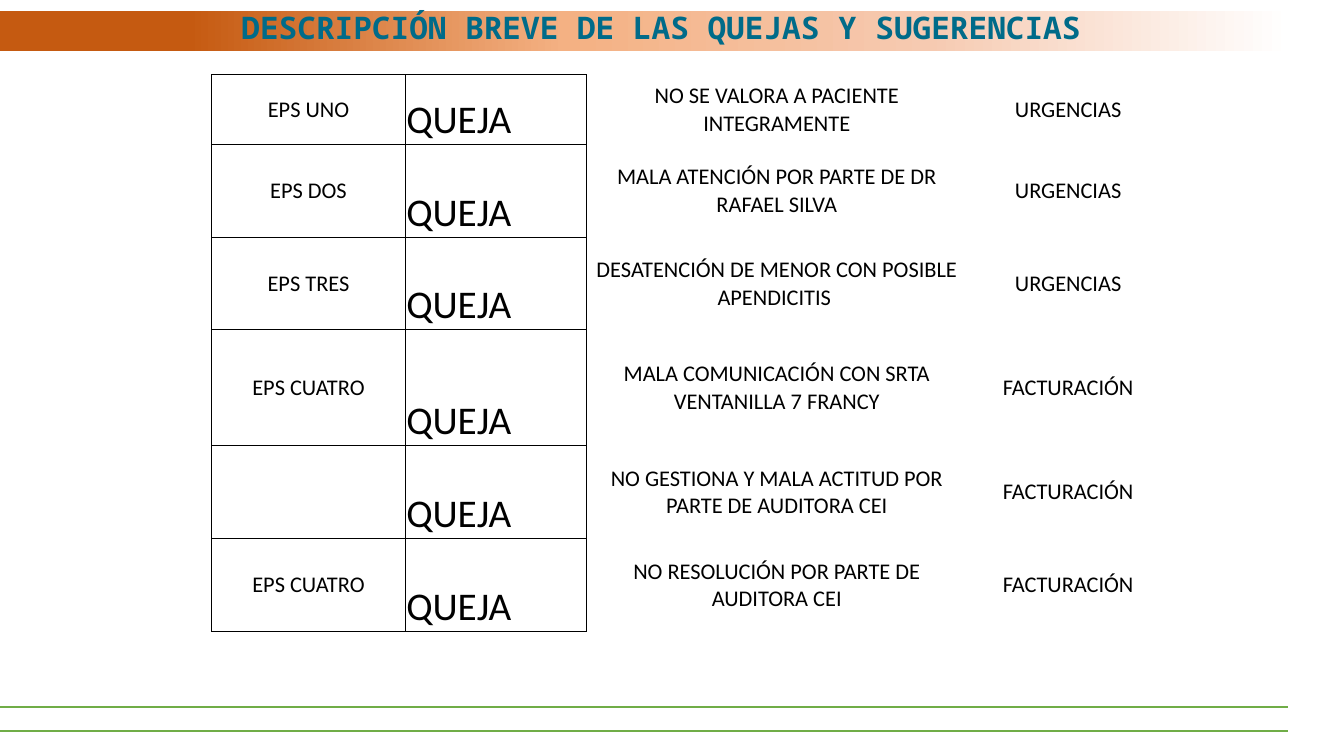
import lxml.etree
import pptx
import pptx.dml.color
import pptx.enum.dml
import pptx.enum.shapes
import pptx.enum.text
import pptx.oxml.ns
import pptx.util

Inches = pptx.util.Inches
Pt = pptx.util.Pt
RGBColor = pptx.dml.color.RGBColor
qn = pptx.oxml.ns.qn
ALIGN = pptx.enum.text.PP_ALIGN
ANCHOR = pptx.enum.text.MSO_ANCHOR

BLACK = RGBColor(0x00, 0x00, 0x00)
TEAL = RGBColor(0x00, 0x6B, 0x89)
GREEN = RGBColor(0x70, 0xAD, 0x47)
BAND_STOPS = [
    (14, RGBColor(0xC5, 0x5A, 0x11)),
    (42, RGBColor(0xF4, 0xB1, 0x83)),
    (69, RGBColor(0xF6, 0xCA, 0xB1)),
    (96, RGBColor(0xFF, 0xFF, 0xFF)),
]

COLUMN_WIDTHS = [1.92, 1.8, 3.77, 2.01]
ROW_HEIGHTS = [0.69, 0.92, 0.92, 1.15, 0.92, 0.92]
COMPLAINTS = [
    ("EPS UNO", "NO SE VALORA A PACIENTE INTEGRAMENTE", "URGENCIAS"),
    ("EPS DOS", "MALA ATENCIÓN POR PARTE DE DR RAFAEL SILVA", "URGENCIAS"),
    ("EPS TRES", "DESATENCIÓN DE MENOR CON POSIBLE APENDICITIS ", "URGENCIAS"),
    ("EPS CUATRO", "MALA COMUNICACIÓN CON SRTA VENTANILLA 7 FRANCY", "FACTURACIÓN"),
    ("", "NO GESTIONA Y MALA ACTITUD POR PARTE DE AUDITORA CEI", "FACTURACIÓN"),
    ("EPS CUATRO", "NO RESOLUCIÓN POR PARTE DE AUDITORA CEI", "FACTURACIÓN"),
]
BORDER_SIDES = ["L", "R", "T", "B"]
COLUMN_BORDERS = ["LRTB", "LRTB", "L", ""]


def write_text(text_frame, text, size, font="Calibri", color=BLACK, bold=False,
               align=ALIGN.CENTER, line_spacing=None):
    paragraph = text_frame.paragraphs[0]
    paragraph.alignment = align
    paragraph.line_spacing = line_spacing
    paragraph.font.size = Pt(size)
    if text:
        run = paragraph.add_run()
        run.text = text
        run.font.size = Pt(size)
        run.font.name = font
        run.font.bold = bold
        run.font.color.rgb = color


def add_band(slide):
    band = slide.shapes.add_shape(
        pptx.enum.shapes.MSO_SHAPE.RECTANGLE,
        Inches(0), Inches(0.11), Inches(13.33), Inches(0.4))
    band.shadow.inherit = False
    band.line.fill.background()
    band.fill.gradient()
    band.fill.gradient_angle = 0
    stop_list = band._element.spPr.find(qn("a:gradFill")).find(qn("a:gsLst"))
    for stop in list(stop_list):
        stop_list.remove(stop)
    for position, color in BAND_STOPS:
        stop = lxml.etree.SubElement(stop_list, qn("a:gs"), pos=str(position * 1000))
        lxml.etree.SubElement(stop, qn("a:srgbClr"), val=str(color))


def add_footer_line(slide, top):
    line = slide.shapes.add_connector(
        pptx.enum.shapes.MSO_CONNECTOR.STRAIGHT,
        Inches(12.77), Inches(top), Inches(0), Inches(top))
    line.line.color.rgb = GREEN
    line.line.width = Pt(1.5)
    lxml.etree.SubElement(line._element.spPr, qn("a:effectLst"))


def add_title(slide, text):
    title = slide.shapes.add_textbox(
        Inches(0.42), Inches(0.11), Inches(12.46), Inches(0.4))
    title.text_frame.word_wrap = True
    write_text(title.text_frame, text, 22.2, font="Noto Sans Mono", color=TEAL,
               bold=True, line_spacing=0.8)


def set_borders(cell, visible_sides):
    properties = cell._tc.get_or_add_tcPr()
    for side in BORDER_SIDES:
        border = lxml.etree.SubElement(
            properties, qn("a:ln" + side), w=str(Pt(0.5)))
        if side in visible_sides:
            fill = lxml.etree.SubElement(border, qn("a:solidFill"))
            lxml.etree.SubElement(fill, qn("a:srgbClr"), val=str(BLACK))
        else:
            lxml.etree.SubElement(border, qn("a:noFill"))


def fill_cell(cell, text, borders, anchor=ANCHOR.MIDDLE, **text_format):
    set_borders(cell, borders)
    cell.fill.background()
    cell.margin_left = cell.margin_right = cell.margin_top = Inches(0.01)
    cell.margin_bottom = Inches(0)
    cell.vertical_anchor = anchor
    write_text(cell.text_frame, text, **text_format)


def add_complaint_table(slide):
    table = slide.shapes.add_table(
        len(ROW_HEIGHTS), len(COLUMN_WIDTHS), Inches(2.1), Inches(0.74),
        Inches(sum(COLUMN_WIDTHS)), Inches(sum(ROW_HEIGHTS))).table
    table.first_row = False
    table.horz_banding = False
    for column, width in zip(table.columns, COLUMN_WIDTHS):
        column.width = Inches(width)
    for row, height, (insurer, description, area) in zip(
            table.rows, ROW_HEIGHTS, COMPLAINTS):
        row.height = Inches(height)
        insurer_cell, kind_cell, description_cell, area_cell = row.cells
        insurer_borders, kind_borders, description_borders, area_borders = COLUMN_BORDERS
        fill_cell(insurer_cell, insurer, insurer_borders, size=16)
        fill_cell(kind_cell, "QUEJA", kind_borders, anchor=ANCHOR.BOTTOM,
                  size=28, align=ALIGN.LEFT)
        fill_cell(description_cell, description, description_borders, size=16)
        fill_cell(area_cell, area, area_borders, size=16)


def main():
    presentation = pptx.Presentation()
    presentation.slide_width = Inches(13.33)
    presentation.slide_height = Inches(7.5)
    slide = presentation.slides.add_slide(presentation.slide_layouts[6])
    add_footer_line(slide, 7.25)
    add_band(slide)
    add_footer_line(slide, 7.01)
    add_title(slide, "DESCRIPCIÓN BREVE DE LAS QUEJAS Y SUGERENCIAS ")
    add_complaint_table(slide)
    presentation.save("out.pptx")


if __name__ == "__main__":
    main()
